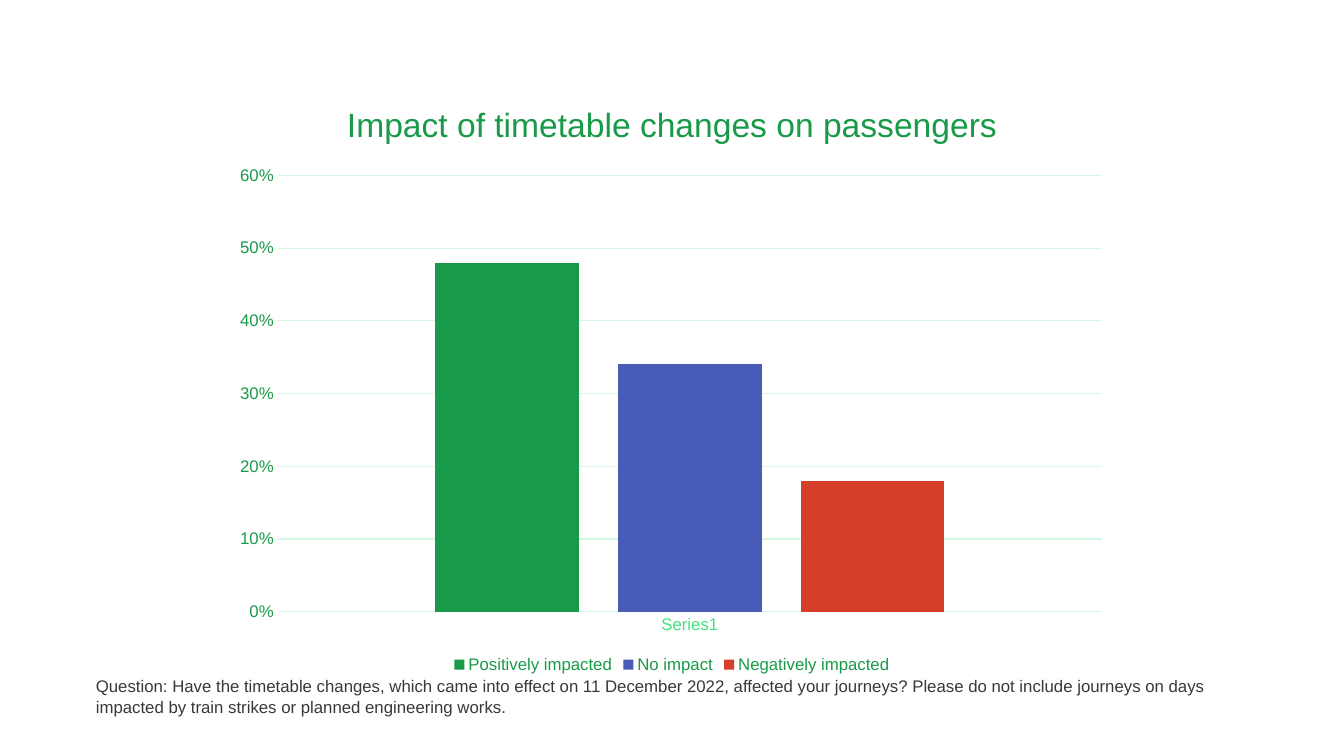
from dataclasses import dataclass

import pptx
import pptx.chart.axis
import pptx.chart.chart
import pptx.chart.data
import pptx.dml.color
import pptx.enum.chart
import pptx.oxml
import pptx.oxml.ns
import pptx.slide
import pptx.text.text
import pptx.util

Pt = pptx.util.Pt
RGB = pptx.dml.color.RGBColor


@dataclass(frozen=True)
class Theme:
    font: str = "Arial"
    title_size: int = 24
    body_size: int = 12
    green: RGB = RGB(0x18, 0x9A, 0x48)
    blue: RGB = RGB(0x48, 0x5B, 0xB6)
    red: RGB = RGB(0xD5, 0x3E, 0x29)
    light_green: RGB = RGB(0x44, 0xE2, 0x7E)
    grid: RGB = RGB(0xD4, 0xF8, 0xE1)
    ink: RGB = RGB(0x36, 0x39, 0x3C)


@dataclass(frozen=True)
class Response:
    label: str
    share: float
    color: RGB


THEME = Theme()
RESPONSES = (
    Response("Positively impacted", 0.48, THEME.green),
    Response("No impact", 0.34, THEME.blue),
    Response("Negatively impacted", 0.18, THEME.red),
)
TITLE = "Impact of timetable changes on passengers"
QUESTION = (
    "Question: Have the timetable changes, which came into effect on 11 December 2022, "
    "affected your journeys? Please do not include journeys on days impacted by train "
    "strikes or planned engineering works."
)


def style_font(font: pptx.text.text.Font, size: int, color: RGB) -> None:
    font.name = THEME.font
    font.size = Pt(size)
    font.bold = False
    font.color.rgb = color


def place_plot(chart: pptx.chart.chart.Chart, x: float, y: float, w: float, h: float) -> None:
    """Fix the inner plot area, in fractions of the chart's size."""
    plot_area = chart.plots[0]._element.getparent()
    for automatic in plot_area.findall(pptx.oxml.ns.qn("c:layout")):
        plot_area.remove(automatic)
    sizes = "".join(f'<c:{key} val="{val}"/>' for key, val in zip("xywh", (x, y, w, h)))
    plot_area.insert(0, pptx.oxml.parse_xml(
        f'<c:layout {pptx.oxml.ns.nsdecls("c")}><c:manualLayout>'
        '<c:layoutTarget val="inner"/><c:xMode val="edge"/><c:yMode val="edge"/>'
        f'{sizes}</c:manualLayout></c:layout>'
    ))


def style_axes(chart: pptx.chart.chart.Chart) -> None:
    answers, shares = chart.category_axis, chart.value_axis
    for axis, color in ((answers, THEME.light_green), (shares, THEME.green)):
        axis.major_tick_mark = pptx.enum.chart.XL_TICK_MARK.NONE
        axis.minor_tick_mark = pptx.enum.chart.XL_TICK_MARK.NONE
        style_font(axis.tick_labels.font, THEME.body_size, color)
    shares.minimum_scale, shares.maximum_scale, shares.major_unit = 0, 0.6, 0.1
    shares.tick_labels.number_format = "0%"
    shares.tick_labels.number_format_is_linked = False
    shares.format.line.fill.background()
    for line in (answers.format.line, shares.major_gridlines.format.line):
        line.color.rgb = THEME.grid
        line.width = Pt(0.75)


def add_impact_chart(slide: pptx.slide.Slide) -> None:
    impact = pptx.chart.data.CategoryChartData(number_format="0%")
    impact.categories = ["Series1"]
    for response in RESPONSES:
        impact.add_series(response.label, [response.share])
    chart = slide.shapes.add_chart(
        pptx.enum.chart.XL_CHART_TYPE.COLUMN_CLUSTERED,
        Pt(160), Pt(57), Pt(640), Pt(427), impact,
    ).chart
    style_font(chart.font, THEME.body_size, THEME.green)

    chart.has_title = True
    heading = chart.chart_title.text_frame
    heading.text = TITLE
    style_font(heading.paragraphs[0].font, THEME.title_size, THEME.green)
    chart.chart_title.include_in_layout = False

    chart.has_legend = True
    chart.legend.position = pptx.enum.chart.XL_LEGEND_POSITION.BOTTOM
    chart.legend.include_in_layout = False
    style_font(chart.legend.font, THEME.body_size, THEME.green)

    bars = chart.plots[0]
    bars.gap_width, bars.overlap, bars.vary_by_categories = 219, -27, False
    for series, response in zip(bars.series, RESPONSES):
        series.format.fill.solid()
        series.format.fill.fore_color.rgb = response.color
    style_axes(chart)
    place_plot(chart, 0.06, 0.16, 0.92, 0.73)


def add_question(slide: pptx.slide.Slide) -> None:
    frame = slide.shapes.add_textbox(Pt(68.5), Pt(483), Pt(844.5), Pt(35)).text_frame
    frame.word_wrap = True
    frame.margin_left = frame.margin_top = frame.margin_right = frame.margin_bottom = 0
    frame.text = QUESTION
    style_font(frame.paragraphs[0].font, THEME.body_size, THEME.ink)


def main() -> None:
    deck = pptx.Presentation()
    deck.slide_width, deck.slide_height = Pt(960), Pt(540)
    slide = deck.slides.add_slide(deck.slide_layouts[6])
    add_impact_chart(slide)
    add_question(slide)
    deck.save("out.pptx")


if __name__ == "__main__":
    main()
